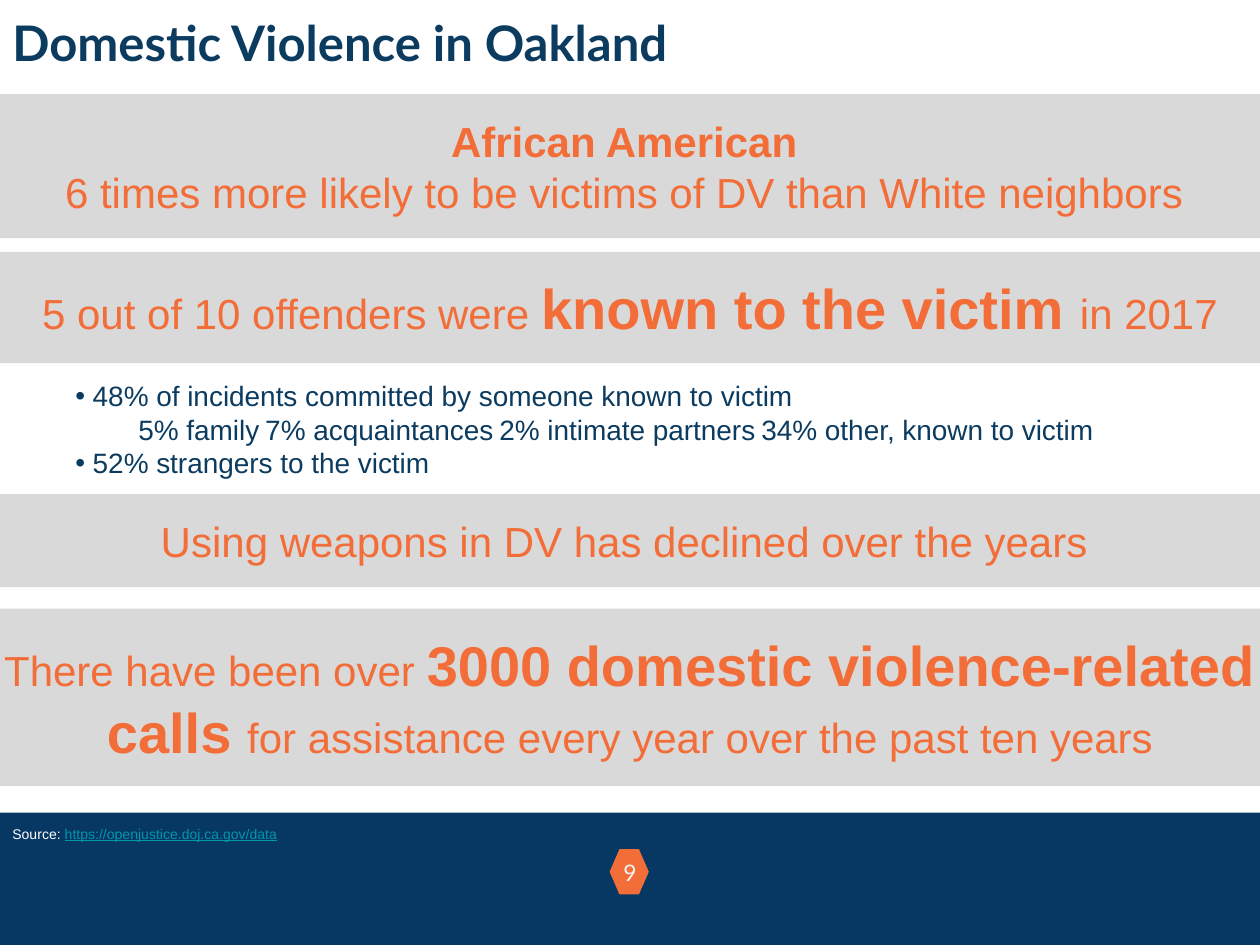
"""Build the slide on domestic violence in Oakland."""
from lxml.etree import SubElement
from pptx import Presentation
from pptx.dml.color import RGBColor
from pptx.enum.shapes import MSO_SHAPE as Shape
from pptx.enum.text import MSO_ANCHOR as Anchor, PP_ALIGN as Align
from pptx.oxml.ns import qn
from pptx.util import Cm, Pt

FOOTER_BLUE = RGBColor(0x07, 0x37, 0x63)
TEXT_BLUE = RGBColor(0x0C, 0x3B, 0x60)
ORANGE = RGBColor(0xF3, 0x6D, 0x38)
GREY = RGBColor(0xD9, 0xD9, 0xD9)
PALE = RGBColor(0xF3, 0xF3, 0xF3)
WHITE = RGBColor(0xFF, 0xFF, 0xFF)
TEAL = RGBColor(0x00, 0x97, 0xA7)


def add_run(paragraph, text, size=24, color=ORANGE, bold=False, font="Arial", underline=None):
    """Append a formatted run to a paragraph."""
    run = paragraph.add_run()
    run.text = text
    run.font.name = font
    run.font.size = Pt(size)
    run.font.bold = bold
    run.font.underline = underline
    run.font.color.rgb = color


def add_filled(kind, left, top, width, height, color):
    """Add a borderless filled shape, measured in centimetres."""
    shape = slide.shapes.add_shape(kind, Cm(left), Cm(top), Cm(width), Cm(height))
    shape.shadow.inherit = False
    shape.fill.solid()
    shape.fill.fore_color.rgb = color
    shape.line.fill.background()
    return shape


presentation = Presentation()
presentation.slide_width = Cm(25.4)
presentation.slide_height = Cm(19.05)
slide = presentation.slides.add_slide(presentation.slide_layouts[5])

add_filled(Shape.RECTANGLE, -0.15, 16.38, 25.68, 2.84, FOOTER_BLUE)
hexagon = add_filled(Shape.HEXAGON, 12.29, 17.12, 0.79, 0.91, ORANGE)
hexagon.adjustments[0] = 0.25

page_number = slide.shapes.add_textbox(Cm(11.94), Cm(17.07), Cm(1.52), Cm(1.52))
frame = page_number.text_frame
frame.word_wrap = True
frame.margin_top = frame.margin_bottom = Cm(0.25)
frame.paragraphs[0].alignment = Align.CENTER
add_run(frame.paragraphs[0], "9", size=13, color=PALE, font="Lato")

source = slide.shapes.add_textbox(Cm(0), Cm(16.51), Cm(5.92), Cm(0.61))
source.text_frame.word_wrap = False
paragraph = source.text_frame.paragraphs[0]
add_run(paragraph, "Source: ", size=8, color=WHITE)
add_run(paragraph, "https://openjustice.doj.ca.gov/data", size=8, color=TEAL, underline=True)

title = slide.shapes.title
title.left, title.top, title.width, title.height = Cm(0), Cm(0), Cm(25.4), Cm(2.39)
frame = title.text_frame
frame.vertical_anchor = Anchor.TOP
frame.margin_left = frame.margin_right = frame.margin_top = frame.margin_bottom = Cm(0.25)
frame.paragraphs[0].alignment = Align.LEFT
add_run(frame.paragraphs[0], "Domestic Violence in Oakland", size=28, color=TEXT_BLUE, bold=True, font="Lato")

REGULAR = {}
STRONG = {"bold": True}
LARGE = {"bold": True, "size": 32}
bands = [
    (1.9, 2.9, [
        [("African American ", STRONG)],
        [("6 times more likely to be victims of DV than White neighbors ", REGULAR)],
    ]),
    (5.08, 2.24, [
        [("5 out of 10 offenders were ", REGULAR), ("known to the victim ", LARGE), ("in 2017", REGULAR)],
    ]),
    (9.96, 1.88, [[("Using weapons in DV has declined over the years ", REGULAR)]]),
    (12.27, 3.58, [
        [("There have been over ", REGULAR), ("3000 domestic violence-related calls ", LARGE),
         ("for assistance every year over the past ten years", REGULAR)],
    ]),
]
for top, height, lines in bands:
    band = add_filled(Shape.RECTANGLE, 0, top, 25.4, height, GREY)
    frame = band.text_frame
    frame.word_wrap = True
    frame.vertical_anchor = Anchor.MIDDLE
    frame.margin_left = frame.margin_right = frame.margin_top = frame.margin_bottom = 0
    for index, line in enumerate(lines):
        paragraph = frame.add_paragraph() if index else frame.paragraphs[0]
        paragraph.alignment = Align.CENTER
        for text, style in line:
            add_run(paragraph, text, **style)

details = slide.shapes.add_textbox(Cm(0), Cm(7.62), Cm(25.4), Cm(2.06))
frame = details.text_frame
frame.word_wrap = True
frame.vertical_anchor = Anchor.MIDDLE
frame.margin_top = frame.margin_bottom = 0
detail_lines = [
    (1, ["48% of incidents committed by someone known to victim"]),
    (2, ["5% family", "7% acquaintances", "2% intimate partners", "34% other, known to victim"]),
    (1, ["52% strangers to the victim"]),
]
for index, (level, parts) in enumerate(detail_lines):
    paragraph = frame.add_paragraph() if index else frame.paragraphs[0]
    paragraph.level = level
    for position, part in enumerate(parts):
        if position:
            add_run(paragraph, " ", size=12, color=TEXT_BLUE)
        add_run(paragraph, part, size=16, color=TEXT_BLUE)
    properties = paragraph._p.get_or_add_pPr()
    bulleted = level == 1
    properties.set("marL", str(Cm(1.62 if bulleted else 2.54)))
    properties.set("indent", str(Cm(-0.35 if bulleted else 0)))
    if bulleted:
        SubElement(properties, qn("a:buFont"), typeface="Arial")
        SubElement(properties, qn("a:buChar"), char="•")

presentation.save("out.pptx")
